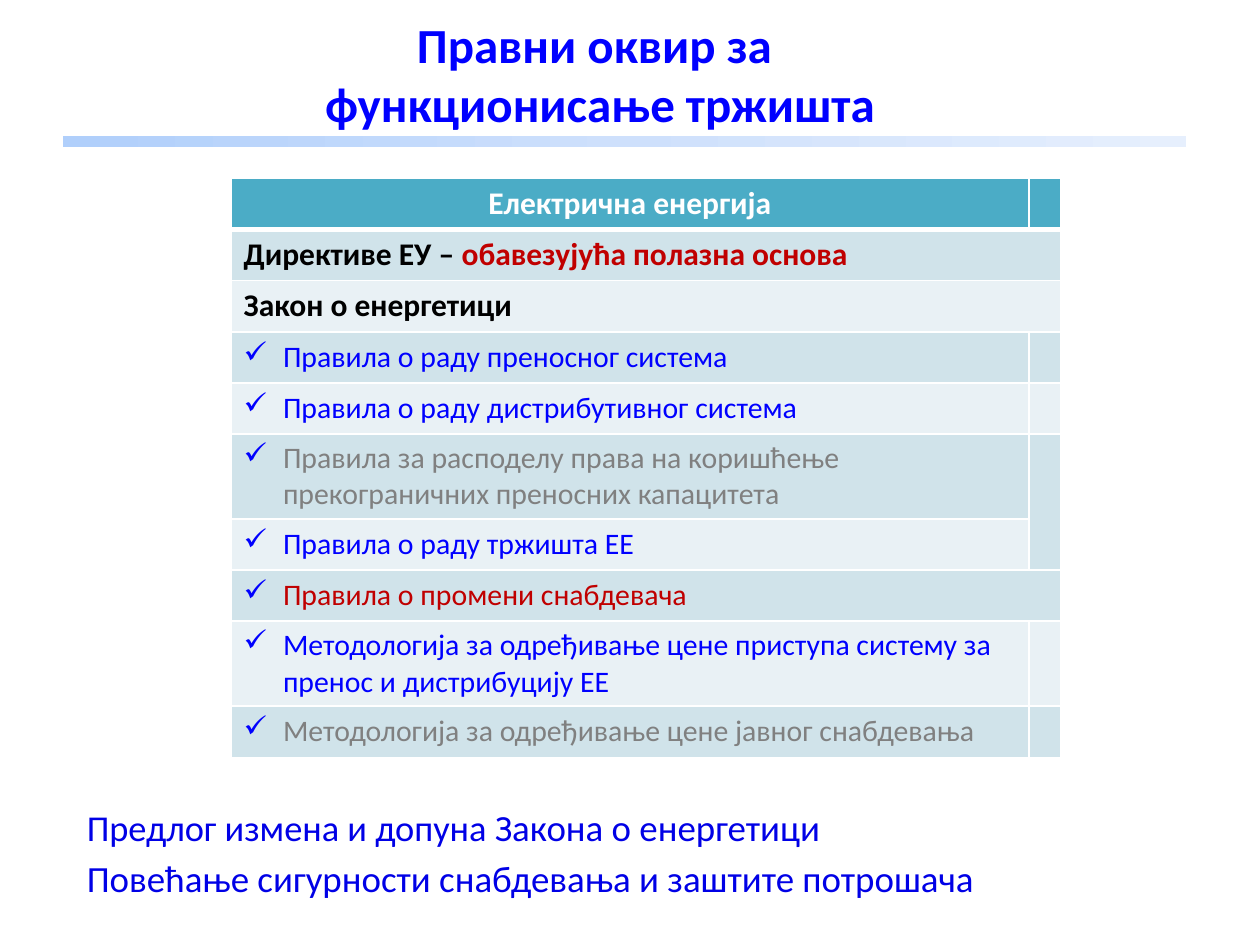
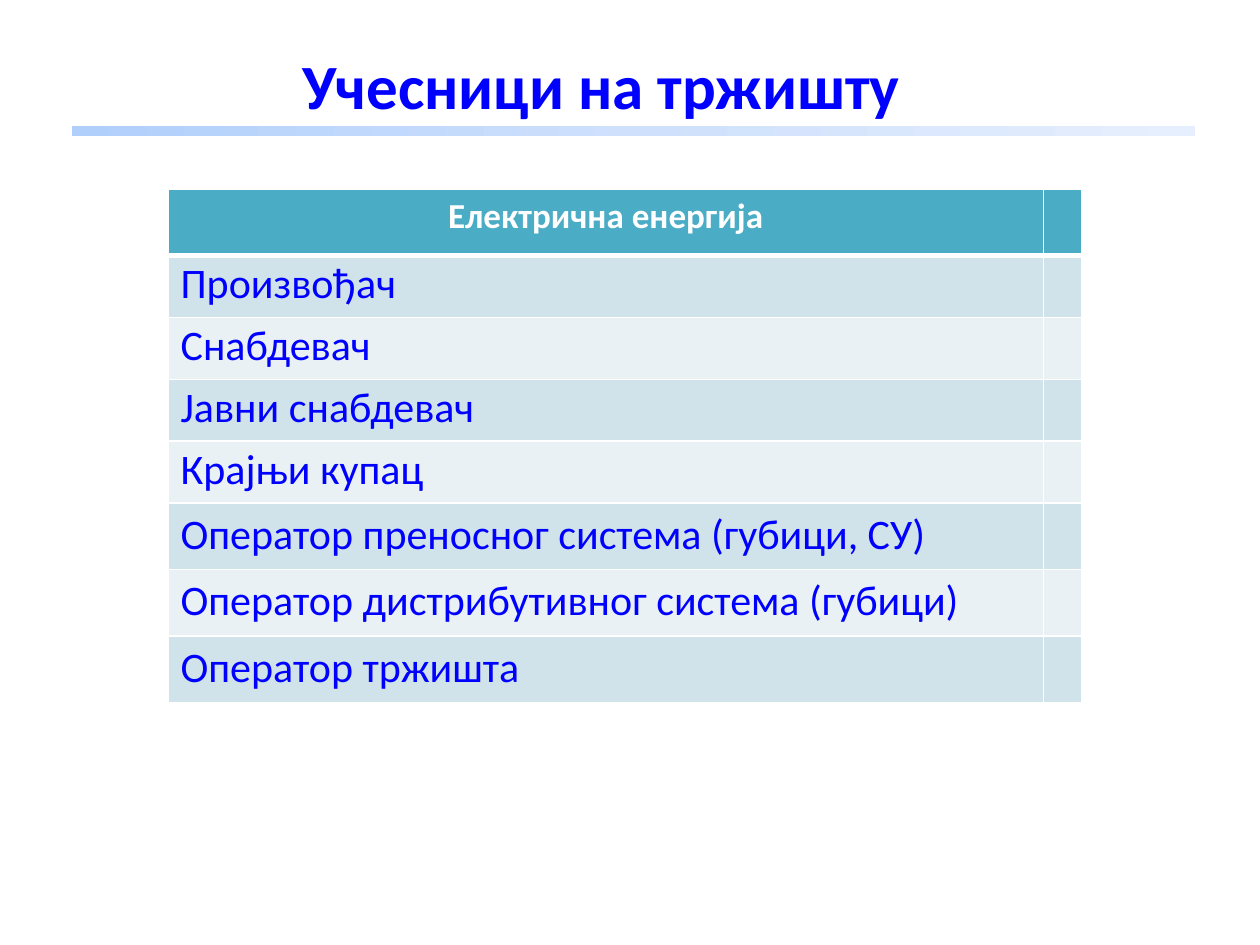
from copy import deepcopy
from dataclasses import dataclass

from pptx import Presentation
from pptx.dml.color import RGBColor
from pptx.enum import shapes, text
from pptx.oxml import ns, xmlchemy as xc
from pptx.util import Pt

# Each line is a list of runs: (text, colour name, size name)
HEAD = "Електрична енергија"
LAWS = [
    dict(runs=[("Директиве ЕУ – ", "black"), ("обавезујућа полазна основа", "red")], bold=True, wide=True),
    dict(runs=[("Закон о енергетици", "black")], bold=True, wide=True),
    dict(runs=[("Правила о раду преносног система", "blue")]),
    dict(runs=[("Правила о раду дистрибутивног система", "blue")]),
    dict(runs=[("Правила за расподелу права на коришћење прекограничних преносних капацитета", "gray")],
         lines=2, tall=True),
    dict(runs=[("Правила о раду тржишта ЕЕ", "blue")]),
    dict(runs=[("Правила о промени снабдевача", "red")], wide=True),
    dict(runs=[("Методологија за одређивање цене приступа систему за пренос и дистрибуцију ЕЕ", "blue")],
         lines=2),
    dict(runs=[("Методологија за одређивање цене јавног снабдевања", "gray")]),
]
NOTES = [
    [("Предлог измена и допуна ", 20.8), ("Закона о енергетици", 21.1)],
    [("Повећање сигурности снабдевања и заштите потрошача", 21.1)],
]
ROLES = ["Произвођач", "Снабдевач", "Јавни снабдевач", "Крајњи купац",
         "Оператор преносног система (губици, СУ)",
         "Оператор дистрибутивног система (губици)", "Оператор тржишта"]
TIGHT = 4  # the first roles sit in closer rows


@dataclass(frozen=True)
class Theme:
    font = "Calibri"
    blue = "0000FF"
    navy = "0000E6"
    red = "C00000"
    gray = "808080"
    black = "000000"
    white = "FFFFFF"
    head = "4BACC6"
    bands = ("D0E3EA", "E9F1F5")
    fade = ("B0CFFB", "CEE0FC", "E6EFFD")
    law = 18
    rule = 17
    role = 24
    label = 20


T = Theme()


def put(para, words, size, color, bold=False, **form):
    """Add a run to a paragraph and set the paragraph's format."""
    run = para.add_run()
    run.text = words
    look = dict(name=T.font, size=Pt(size), bold=bold)
    for key, val in look.items():
        setattr(run.font, key, val)
    run.font.color.rgb = RGBColor.from_string(color)
    for key, val in form.items():
        setattr(para, key, val)


def add_text(slide, box, anchor):
    frame = slide.shapes.add_textbox(*map(Pt, box)).text_frame
    for key, val in dict(word_wrap=True, vertical_anchor=anchor).items():
        setattr(frame, key, val)
    return frame


def add_top(slide, title, box, size, bar):
    """Add the title and the fading bar below it."""
    frame = add_text(slide, box, text.MSO_ANCHOR.MIDDLE)
    para = frame.paragraphs[0]
    para.alignment = text.PP_ALIGN.CENTER
    for i, line in enumerate(title):
        if i:
            para.add_line_break()
        put(para, line, size, T.blue, True)

    band = slide.shapes.add_shape(shapes.MSO_SHAPE.RECTANGLE, *map(Pt, bar))
    band.shadow.inherit = False
    band.line.fill.background()
    band.fill.gradient()
    band.fill.gradient_angle = 0
    stops = band._element.spPr.find(".//" + ns.qn("a:gsLst"))
    stops.insert(1, deepcopy(stops[0]))
    for i, (stop, color) in enumerate(zip(band.fill.gradient_stops, T.fade)):
        stop.position = i / 2
        stop.color.rgb = RGBColor.from_string(color)


def edge(cell, row):
    """Draw white cell borders, heavy between the head and the body."""
    props = cell._tc.get_or_add_tcPr()
    sides = dict(L=1, R=1, T=3 if row == 1 else 1, B=3 if row == 0 else 1)
    for i, (side, wide) in enumerate(sides.items()):
        line = xc.OxmlElement(f"a:ln{side}")
        line.set("w", str(Pt(wide)))
        fill = xc.OxmlElement("a:solidFill")
        color = xc.OxmlElement("a:srgbClr")
        color.set("val", T.white)
        fill.append(color)
        line.append(fill)
        props.insert(i, line)


def tick(para):
    props = para._p.get_or_add_pPr()
    inset = Pt(22.5)
    props.set("marL", str(inset))
    props.set("indent", str(-inset))
    tint = xc.OxmlElement("a:buClr")
    color = xc.OxmlElement("a:srgbClr")
    color.set("val", T.blue)
    tint.append(color)
    mark = xc.OxmlElement("a:buChar")
    mark.set("char", "✓")
    props.extend([tint, mark])


def add_grid(slide, left, top, cols, rows, size):
    """Add a banded table whose head is set in the given size."""
    frame = slide.shapes.add_table(len(rows), len(cols), Pt(left), Pt(top),
                                   Pt(sum(cols)), Pt(sum(rows)))
    grid = frame.table
    grid.first_row = grid.horz_banding = False
    for col, wide in zip(grid.columns, cols):
        col.width = Pt(wide)
    for i, (row, high) in enumerate(zip(grid.rows, rows)):
        row.height = Pt(high)
        for cell in row.cells:
            cell.fill.solid()
            color = T.bands[(i - 1) % 2] if i else T.head
            cell.fill.fore_color.rgb = RGBColor.from_string(color)
            cell.text_frame.paragraphs[0].font.size = Pt(T.rule)
            edge(cell, i)
    put(grid.cell(0, 0).text_frame.paragraphs[0], HEAD, size, T.white, True,
        alignment=text.PP_ALIGN.CENTER)
    return grid


def add_laws(slide):
    add_top(slide, ["Правни оквир за ", "функционисање тржишта"],
            (36, 12, 613.5, 60), 28, (36, 78, 642, 6))
    rows = [29.2] + [48.6 if law.get("lines") else 29.2 for law in LAWS]
    grid = add_grid(slide, 132, 102, (456, 18), rows, T.law)
    for i, law in enumerate(LAWS, 1):
        cell = grid.cell(i, 0)
        if law.get("wide"):
            cell.merge(grid.cell(i, 1))
        if law.get("tall"):
            grid.cell(i, 1).merge(grid.cell(i + 1, 1))
        bold = law.get("bold", False)
        para = cell.text_frame.paragraphs[0]
        for words, color in law["runs"]:
            put(para, words, T.law if bold else T.rule, getattr(T, color), bold)
        if not bold:
            cell.vertical_anchor = text.MSO_ANCHOR.MIDDLE
            tick(para)

    frame = add_text(slide, (42.5, 456, 558, 78), text.MSO_ANCHOR.TOP)
    for i, note in enumerate(NOTES):
        para = frame.add_paragraph() if i else frame.paragraphs[0]
        for words, size in note:
            put(para, words, size, T.navy, space_before=Pt(4.2))


def add_roles(slide):
    add_top(slide, ["Учесници на тржишту"], (37.5, 12, 612, 72), 36,
            (41, 72, 642, 6))
    rows = [38] + [35.4 if i < TIGHT else 38 for i in range(len(ROLES))]
    grid = add_grid(slide, 96, 108, (500.4, 21.6), rows, T.label)
    for i, role in enumerate(ROLES):
        put(grid.cell(i + 1, 0).text_frame.paragraphs[0], role, T.role, T.blue,
            line_spacing=0.9 if i < TIGHT else 1.0)


def main():
    deck = Presentation()
    deck.slide_width, deck.slide_height = Pt(720), Pt(540)
    for build in (add_laws, add_roles):
        build(deck.slides.add_slide(deck.slide_layouts[6]))
    deck.save("out.pptx")


if __name__ == "__main__":
    main()
